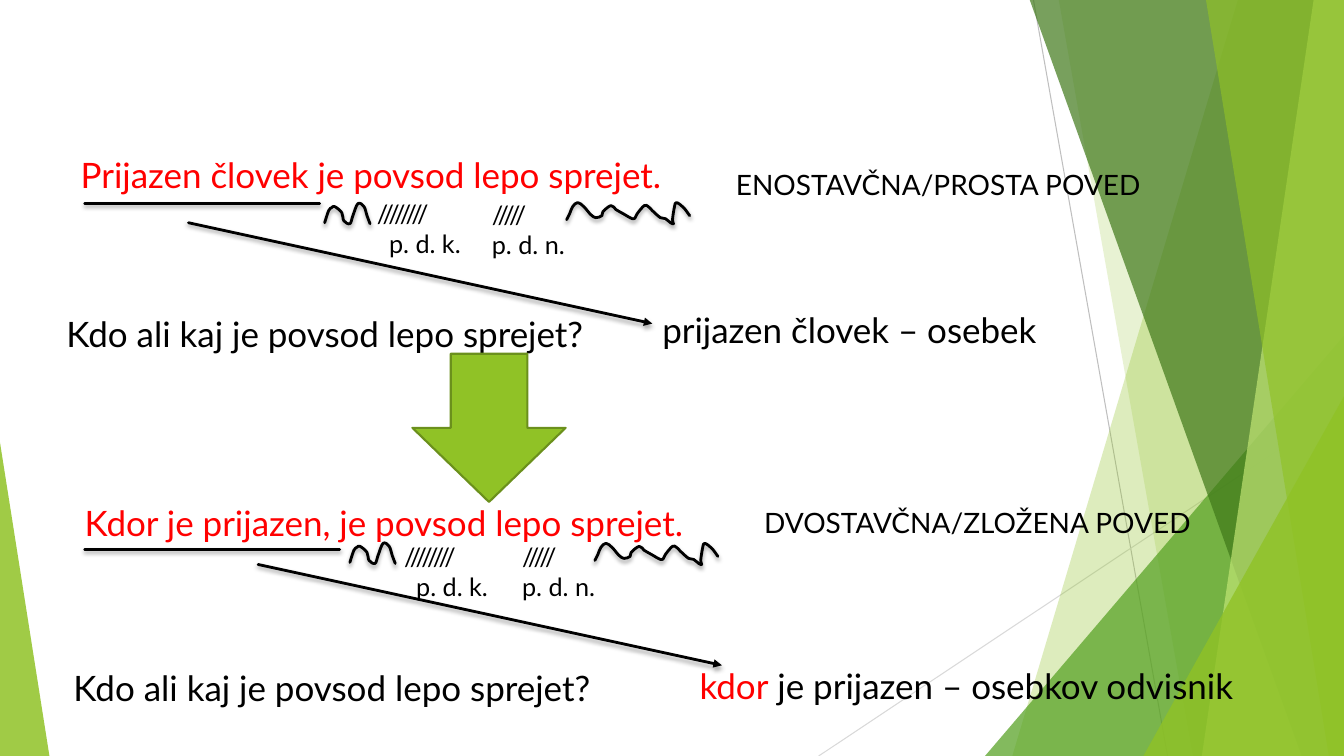
from lxml import etree
from pptx import Presentation
from pptx.dml.color import RGBColor
from pptx.enum.shapes import MSO_CONNECTOR, MSO_SHAPE
from pptx.enum.text import MSO_AUTO_SIZE
from pptx.oxml.ns import qn
from pptx.util import Inches, Pt

STRAIGHT = MSO_CONNECTOR.STRAIGHT
TRIANGLE = MSO_SHAPE.ISOSCELES_TRIANGLE
DOWN_ARROW = MSO_SHAPE.DOWN_ARROW
NO_AUTOFIT, GROW = MSO_AUTO_SIZE.NONE, MSO_AUTO_SIZE.SHAPE_TO_FIT_TEXT

BLACK = RGBColor(0x00, 0x00, 0x00)
RED = RGBColor(0xFF, 0x00, 0x00)
LIME = RGBColor(0x90, 0xC2, 0x26)
OLIVE = RGBColor(0x6B, 0x90, 0x1C)
GREEN = RGBColor(0x54, 0xA0, 0x21)
DARK_GREEN = RGBColor(0x3F, 0x78, 0x19)
PALE_LIME = RGBColor(0xC0, 0xE4, 0x74)
GREY = RGBColor(0xBF, 0xBF, 0xBF)
LIGHT_GREY = RGBColor(0xD9, 0xD9, 0xD9)

FONT = "Lato"
WIDTH, HEIGHT = 13.33, 7.5

SHORT_WAVE = [(0, .19), (.04, .07), (.07, .04), (.1, .03), (.17, .09), (.19, .17),
              (.25, .2), (.28, .12), (.33, 0), (.39, .03), (.42, .12), (.45, .2)]
LONG_WAVE = [(0, .17), (.03, .11), (.06, .04), (.11, 0), (.17, .04), (.24, .12),
             (.29, .15), (.35, .13), (.36, .09), (.44, .03), (.49, .07), (.56, .11),
             (.65, .16), (.68, .15), (.7, .11), (.77, .03), (.81, .04), (.85, .08),
             (.93, .15), (.98, .16), (1.03, .2), (1.06, .21), (1.05, .17),
             (1.07, .04), (1.09, 0), (1.16, .05), (1.22, .13)]


def set_effects(shape, shadow):
    """Give the shape a soft shadow below it, or an empty effect list."""
    effects = etree.SubElement(shape._element.spPr, qn("a:effectLst"))
    if shadow:
        outer = etree.SubElement(effects, qn("a:outerShdw"), blurRad=str(Pt(3)),
                                 dist=str(Pt(2)), dir="5400000", rotWithShape="0")
        color = etree.SubElement(outer, qn("a:srgbClr"), val=str(BLACK))
        etree.SubElement(color, qn("a:alpha"), val="35000")


def set_fill(shape, color, opacity=100):
    shape.fill.solid()
    shape.fill.fore_color.rgb = color
    if opacity < 100:
        srgb = shape._element.spPr.find(qn("a:solidFill"))[0]
        etree.SubElement(srgb, qn("a:alpha"), val=str(opacity * 1000))


def set_stroke(shape, color, width):
    """Set a round-ended stroke and return its XML element."""
    shape.line.color.rgb = color
    shape.line.width = Pt(width)
    ln = shape._element.spPr.find(qn("a:ln"))
    ln.set("cap", "rnd")
    return ln


def add_line(s, start, end, color=BLACK, width=2, arrow=False, shadow=True):
    line = s.shapes.add_connector(STRAIGHT, *map(Inches, start + end))
    ln = set_stroke(line, color, width)
    if arrow:
        etree.SubElement(ln, qn("a:tailEnd"), type="triangle")
    set_effects(line, shadow)


def add_outline(s, points, close):
    (x, y), *rest = [(Inches(px), Inches(py)) for px, py in points]
    builder = s.shapes.build_freeform(x, y)
    builder.add_line_segments(rest, close=close)
    return builder.convert_to_shape()


def round_corners(shape):
    """Turn the straight segments of an open outline into smooth curves."""
    nodes = list(shape._element.iter(qn("a:pt")))
    points = [(int(n.get("x")), int(n.get("y"))) for n in nodes]
    padded = [points[0], *points, points[-1]]
    for node, a, b, c, d in zip(nodes[1:], padded, padded[1:], padded[2:], padded[3:]):
        segment = node.getparent()
        curve = etree.Element(qn("a:cubicBezTo"))
        leaving = [q + (r - p) / 6 for p, q, r in zip(a, b, c)]
        arriving = [q - (r - p) / 6 for p, q, r in zip(b, c, d)]
        for x, y in (leaving, arriving, c):
            etree.SubElement(curve, qn("a:pt"), x=str(round(x)), y=str(round(y)))
        segment.getparent().replace(segment, curve)


def add_wave(s, left, top, wave):
    shape = add_outline(s, [(left + x, top + y) for x, y in wave], False)
    round_corners(shape)
    shape.fill.background()
    set_stroke(shape, BLACK, 2)
    set_effects(shape, True)


def add_run(p, text, size, color):
    r = p.add_run()
    r.text = text
    r.font.name = FONT
    r.font.size = Pt(size)
    r.font.color.rgb = color


def add_text(s, box, paragraphs, size):
    """Add a text box; each paragraph is a list of (text, color) runs."""
    tf = s.shapes.add_textbox(*map(Inches, box)).text_frame
    tf.word_wrap = True
    tf.auto_size = GROW
    for i, runs in enumerate(paragraphs):
        p = tf.add_paragraph() if i else tf.paragraphs[0]
        for text, color in runs:
            add_run(p, text, size, color)
    return tf


def draw_background(s):
    add_line(s, (10.25, 0), (11.58, HEIGHT), GREY, 0.75, shadow=False)
    add_line(s, (WIDTH, 4.03), (8.12, HEIGHT), LIGHT_GREY, 0.75, shadow=False)

    def plain(shape, color, opacity):
        set_fill(shape, color, opacity)
        shape.line.fill.background()
        shape.shadow.inherit = False

    def band(top_x, bottom_x, color, opacity):
        corners = [(top_x, -0.01), (WIDTH, -0.01), (WIDTH, HEIGHT), (bottom_x, HEIGHT)]
        plain(add_outline(s, corners, True), color, opacity)

    def corner(left, top, width, apex, color, opacity):
        box = map(Inches, (left, top, width, HEIGHT - top))
        shape = s.shapes.add_shape(TRIANGLE, *box)
        shape.adjustments[0] = apex
        plain(shape, color, opacity)

    band(12.28, 10.04, LIME, 30)
    band(10.5, 11.83, LIME, 20)
    corner(9.77, 3.33, 3.56, 1, GREEN, 72)
    band(10.21, 12.91, DARK_GREEN, 70)
    band(13.03, 11.92, PALE_LIME, 70)
    band(11.96, 13.18, LIME, 65)
    corner(11.34, 3.93, 1.99, 1, LIME, 80)
    corner(0, 4.39, 0.49, 0, LIME, 85)


def draw_first_sentence(s, left, top, width, height):
    body = s.placeholders[1]
    body.left, body.top, body.width, body.height = map(
        Inches, (left, top, width, height))
    tf = body.text_frame
    tf.auto_size = NO_AUTOFIT
    p = tf.paragraphs[0]
    p.space_before = Pt(10)
    pPr = p._p.get_or_add_pPr()
    pPr.set("marL", "0")
    pPr.set("indent", "0")
    etree.SubElement(pPr, qn("a:buNone"))
    add_run(p, "Prijazen človek je povsod lepo sprejet.", 25, RED)


def draw_analysis(s, top, underline, verb, manner, place, predicate):
    """Mark the sentence parts; each part is given by its left and drop from top."""
    x, drop, length = underline
    add_line(s, (x, top + drop), (x + length, top + drop))
    for (x, drop), wave in ((verb, SHORT_WAVE), (predicate, LONG_WAVE)):
        add_wave(s, x, top + drop, wave)
    for (x, drop), width, strokes, label, indent in (
            (manner, 1.5, "////////", "p. d. k.", 0.12),
            (place, 1.16, "/////", "p. d. n.", 0)):
        tf = add_text(s, (x, top + drop, width, 0.71),
                      [[(strokes, BLACK)], [(label, BLACK)]], 18)
        tf.paragraphs[1]._p.get_or_add_pPr().set("marL", str(Inches(indent)))


def draw_question(s, question_box, answer_box, answer, arrow_start):
    add_text(s, question_box, [[("Kdo ali kaj je povsod lepo sprejet?", BLACK)]], 25)
    add_text(s, answer_box, [answer], 25)
    x, y = arrow_start
    add_line(s, (x, y), (x + 4.6, y + 1), arrow=True)


def draw_simple_sentence(s, left, top):
    draw_first_sentence(s, left, top, 9.4, 5.06)
    draw_analysis(s, top, (left + 0.14, 0.55, 2.33), (left + 2.52, 0.55),
                  (left + 2.94, 0.45), (left + 4.08, 0.46), (left + 4.92, 0.54))
    add_text(s, (left + 6.5, top + 0.14, 4.93, 0.44),
             [[("ENOSTAVČNA/PROSTA POVED", BLACK)]], 20)
    draw_question(s, (left - 0.14, top + 1.58, 6.1, 0.52),
                  (left + 5.77, top + 1.54, 4.65, 0.52),
                  [("prijazen človek – osebek", BLACK)], (left + 1.17, top + 0.74))


def draw_compound_sentence(s, left, top):
    add_text(s, (left, top, 7.62, 0.52),
             [[("Kdor je prijazen, je povsod lepo sprejet.", RED)]], 25)
    draw_analysis(s, top, (left + 0.1, 0.52, 2.53), (left + 2.73, 0.46),
                  (left + 3.17, 0.39), (left + 4.34, 0.39), (left + 5.16, 0.46))
    add_text(s, (left + 6.74, top + 0.04, 5.56, 0.44),
             [[("DVOSTAVČNA/ZLOŽENA POVED", BLACK)]], 20)
    draw_question(s, (left - 0.11, top + 1.63, 6.28, 0.52),
                  (left + 6.1, top + 1.61, 6.17, 0.52),
                  [("kdor", RED), (" je prijazen – osebkov odvisnik", BLACK)],
                  (left + 1.82, top + 0.67))


def draw_down_arrow(s, left, top, width, height):
    arrow = s.shapes.add_shape(DOWN_ARROW, *map(Inches, (left, top, width, height)))
    set_fill(arrow, LIME)
    arrow.line.color.rgb = OLIVE
    arrow.line.width = Pt(1.5)
    arrow.shadow.inherit = False


def main():
    prs = Presentation()
    prs.slide_width, prs.slide_height = Inches(WIDTH), Inches(HEIGHT)
    s = prs.slides.add_slide(prs.slide_layouts[1])
    title = s.shapes.title._element
    title.getparent().remove(title)
    draw_background(s)
    draw_simple_sentence(s, 0.7, 1.47)
    draw_down_arrow(s, 4.09, 3.51, 1.52, 1.47)
    draw_compound_sentence(s, 0.74, 4.93)
    prs.save("out.pptx")


if __name__ == "__main__":
    main()
